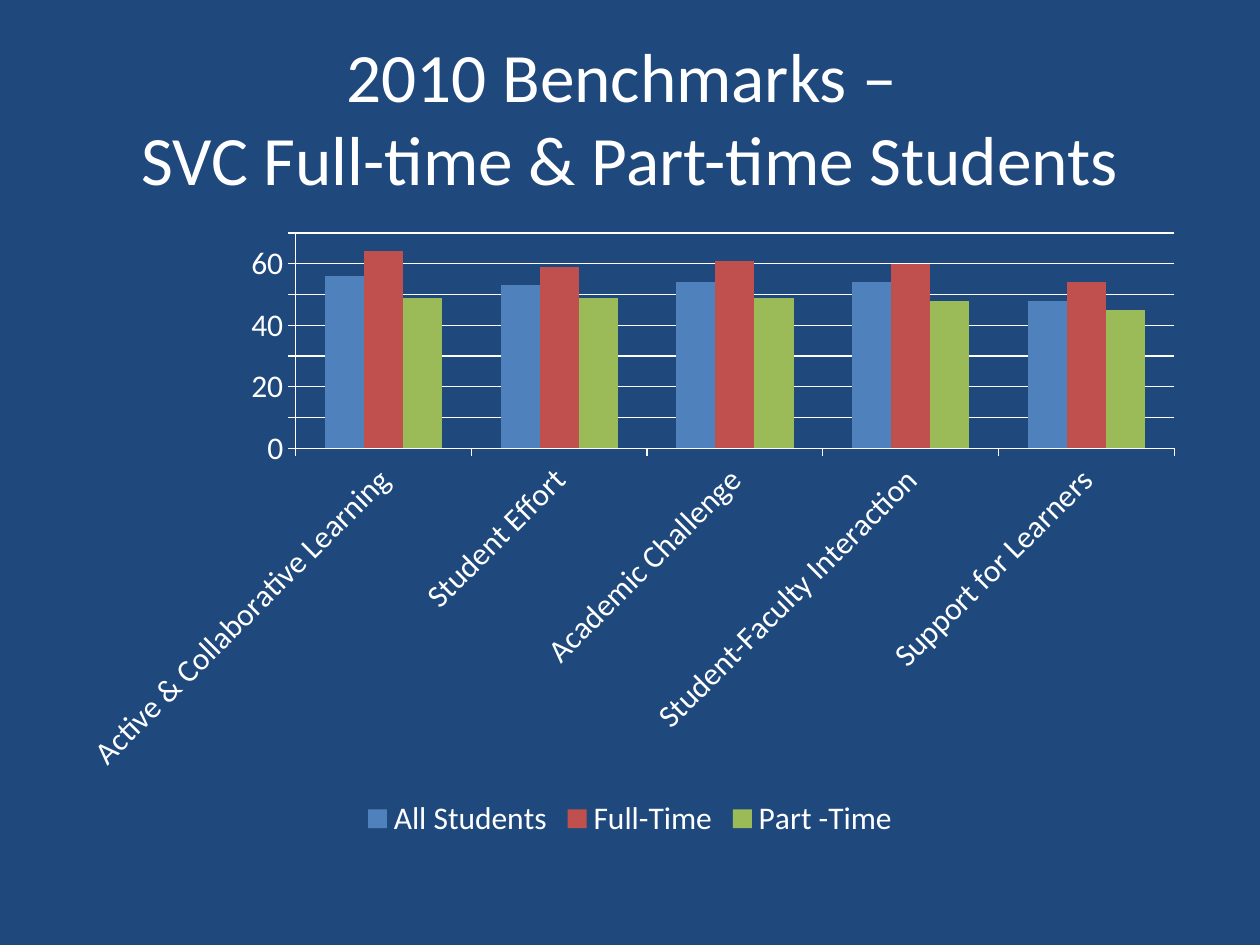
"""Build the 2010 benchmarks slide with its clustered column chart."""
from pptx import Presentation
from pptx.chart.data import CategoryChartData
from pptx.dml.color import RGBColor
from pptx.enum.chart import XL_CHART_TYPE as ChartType
from pptx.enum.chart import XL_LEGEND_POSITION as LegendPosition
from pptx.enum.chart import XL_TICK_MARK as TickMark
from pptx.enum.text import MSO_ANCHOR as Anchor
from pptx.enum.text import PP_ALIGN as Align
from pptx.util import Inches, Pt

NAVY = RGBColor(0x1F, 0x49, 0x7D)
WHITE = RGBColor(0xFF, 0xFF, 0xFF)
BLUE = RGBColor(0x4F, 0x81, 0xBD)
RED = RGBColor(0xC0, 0x50, 0x4D)
GREEN = RGBColor(0x9B, 0xBB, 0x59)
FONT = "Calibri"

TITLE_LINES = ["2010 Benchmarks – ", "SVC Full-time & Part-time Students"]
BENCHMARKS = [
    "Active & Collaborative Learning",
    "Student Effort",
    "Academic Challenge",
    "Student-Faculty Interaction",
    "Support for Learners",
]
STUDENT_GROUPS = [
    ("All Students", BLUE, (56, 53, 54, 54, 48)),
    ("Full-Time", RED, (64, 59, 61, 60, 54)),
    ("Part -Time", GREEN, (49, 49, 49, 48, 45)),
]


def style_font(font, size):
    font.name = FONT
    font.size = Pt(size)
    font.color.rgb = WHITE


def add_title(slide):
    title = slide.shapes.add_textbox(Inches(0.5), Inches(0.3), Inches(9), Inches(1.25))
    frame = title.text_frame
    frame.word_wrap = True
    frame.vertical_anchor = Anchor.MIDDLE
    heading = frame.paragraphs[0]
    heading.alignment = Align.CENTER
    for index, line in enumerate(TITLE_LINES):
        if index:
            heading.add_line_break()
        run = heading.add_run()
        run.text = line
        style_font(run.font, 39.6)


def add_benchmarks(slide):
    scores = CategoryChartData(number_format="0")
    scores.categories = BENCHMARKS
    for name, _, values in STUDENT_GROUPS:
        scores.add_series(name, values)
    chart = slide.shapes.add_chart(
        ChartType.COLUMN_CLUSTERED,
        Inches(0.5), Inches(1.75), Inches(9), Inches(4.95), scores,
    ).chart
    chart.has_title = False
    style_font(chart.font, 18)

    chart.has_legend = True
    chart.legend.position = LegendPosition.BOTTOM
    chart.legend.include_in_layout = False
    style_font(chart.legend.font, 18)

    columns = chart.plots[0]
    columns.gap_width = 150
    columns.overlap = 0
    columns.vary_by_categories = False
    for series, (_, color, _) in zip(columns.series, STUDENT_GROUPS):
        series.format.fill.solid()
        series.format.fill.fore_color.rgb = color
        series.invert_if_negative = False

    score_axis = chart.value_axis
    score_axis.minimum_scale = 0
    score_axis.maximum_scale = 70
    score_axis.major_unit = 10
    score_axis.has_major_gridlines = True
    lines = [score_axis.major_gridlines.format.line]
    for axis in (chart.category_axis, score_axis):
        axis.major_tick_mark = TickMark.OUTSIDE
        axis.minor_tick_mark = TickMark.NONE
        style_font(axis.tick_labels.font, 18)
        lines.append(axis.format.line)
    for line in lines:
        line.color.rgb = WHITE
        line.width = Pt(0.75)
    label_body = chart.category_axis.format.line._ln.getparent().getparent().txPr.bodyPr
    label_body.set("rot", "-2700000")
    label_body.set("vert", "horz")


def main():
    deck = Presentation()
    deck.slide_width, deck.slide_height = Inches(10), Inches(7.5)
    slide = deck.slides.add_slide(deck.slide_layouts[6])
    slide.background.fill.solid()
    slide.background.fill.fore_color.rgb = NAVY
    add_title(slide)
    add_benchmarks(slide)
    deck.save("out.pptx")


if __name__ == "__main__":
    main()
